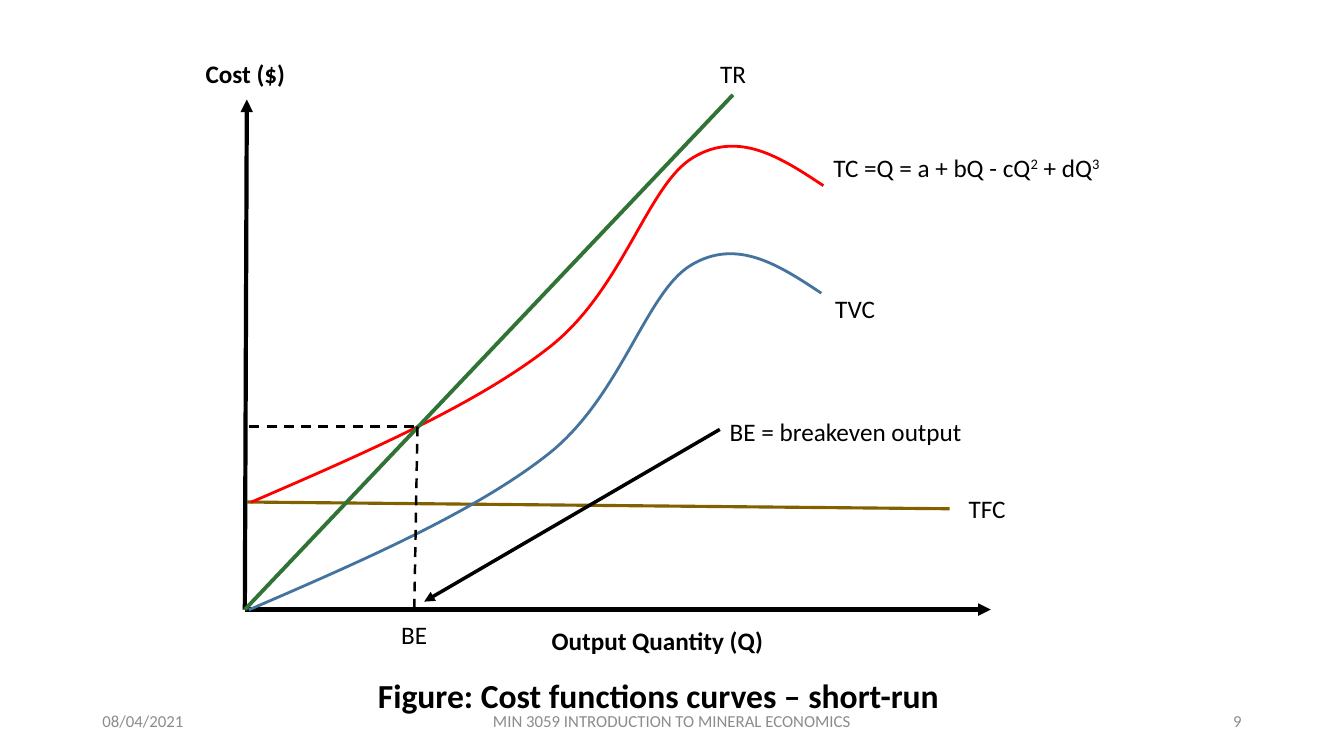
from dataclasses import dataclass

import lxml.etree
import pptx
import pptx.dml.color
import pptx.enum.dml
import pptx.enum.shapes
import pptx.enum.text
import pptx.oxml.ns
import pptx.shapes.base
import pptx.shapes.shapetree
import pptx.text.text
import pptx.util

Cm = pptx.util.Cm
qn = pptx.oxml.ns.qn
Align = pptx.enum.text.PP_ALIGN
Anchor = pptx.enum.text.MSO_ANCHOR
AutoSize = pptx.enum.text.MSO_AUTO_SIZE
Point = tuple[float, float]


@dataclass(frozen=True)
class Theme:
    font: str = "Calibri"
    ink: str = "000000"
    muted: str = "8C8C8C"
    fixed_cost: str = "806000"
    variable_cost: str = "43739E"
    total_cost: str = "FF0000"
    revenue: str = "2F7335"
    caption_size: float = 24
    label_size: float = 18
    footer_size: float = 12


THEME = Theme()


@dataclass(frozen=True)
class Label:
    """Text at a place in cm; every second run is superscript."""
    runs: tuple[str, ...]
    left: float
    top: float
    width: float
    height: float = 1.02
    size: float = THEME.label_size
    color: str = THEME.ink
    bold: bool = False
    align: Align = Align.LEFT
    anchor: Anchor = Anchor.TOP


@dataclass(frozen=True)
class Segment:
    start: Point
    end: Point
    color: str
    weight: float
    arrow: bool = False
    dashed: bool = False


@dataclass(frozen=True)
class Curve:
    color: str
    shift: Point


ORIGIN = (6.17, 15.36)
BREAKEVEN = (10.52, 10.75)
BREAKEVEN_OUTPUT = (10.44, ORIGIN[1])

AXES_AND_FIXED_COST = (
    Segment(ORIGIN, (6.22, 2.51), THEME.ink, 3, arrow=True),
    Segment(ORIGIN, (24.97, ORIGIN[1]), THEME.ink, 3, arrow=True),
    Segment((6.22, 12.65), (23.93, 12.82), THEME.fixed_cost, 2.25),
)
REVENUE_AND_BREAKEVEN = (
    Segment(ORIGIN, (18.47, 2.39), THEME.revenue, 2.75),
    Segment(BREAKEVEN, BREAKEVEN_OUTPUT, THEME.ink, 1.75, dashed=True),
    Segment((BREAKEVEN_OUTPUT[0], BREAKEVEN[1]), (ORIGIN[0], BREAKEVEN[1]),
            THEME.ink, 1.75, dashed=True),
    Segment((18.14, 10.82), (10.69, 15.16), THEME.ink, 2.5, arrow=True),
)

# Bézier points of the variable cost; total cost is the same curve raised by the fixed cost.
COST_START: Point = (6.27, 15.37)
COST_ARCS: tuple[tuple[Point, Point, Point], ...] = (
    ((9.09, 14.15), (11.91, 12.93), (13.77, 11.48)),
    ((15.65, 10.03), (16.26, 7.37), (17.42, 6.68)),
    ((18.57, 5.99), (19.63, 6.68), (20.70, 7.39)),
)
COST_PEAK = 6.40
CURVES = (
    Curve(THEME.variable_cost, (0, 0)),
    Curve(THEME.total_cost, (0.05, -2.71)),
)

CAPTION = Label(("Figure: Cost functions curves – short-run",), 9.27, 16.87, 16.56, 1.27,
                size=THEME.caption_size, bold=True)
LABELS = (
    Label(("TC =Q = a + bQ - cQ", "2", " + dQ", "3"), 20.75, 3.71, 8.03),
    Label(("TVC",), 20.80, 7.26, 3.18),
    Label(("TFC",), 24.16, 12.31, 2.74),
    Label(("Output Quantity (Q)",), 13.65, 15.63, 6.55, bold=True),
    Label(("Cost ($)",), 4.93, 1.35, 4.34, bold=True),
    Label(("TR",), 17.90, 1.35, 3.78),
    Label(("BE",), 9.86, 15.47, 2.31),
    Label(("BE = breakeven output",), 18.14, 10.36, 6.5),
)
FOOTERS = tuple(
    Label((text,), left, 17.65, width, size=THEME.footer_size, color=THEME.muted,
          align=align, anchor=Anchor.MIDDLE)
    for text, left, width, align in (
        ("08/04/2021", 2.33, 7.62, Align.LEFT),
        ("MIN 3059 INTRODUCTION TO MINERAL ECONOMICS", 11.22, 11.43, Align.CENTER),
        ("9", 23.92, 7.62, Align.RIGHT),
    )
)


def rgb(color: str) -> pptx.dml.color.RGBColor:
    return pptx.dml.color.RGBColor.from_string(color)


def write_label(frame: pptx.text.text.TextFrame, label: Label) -> None:
    frame.word_wrap = True
    frame.auto_size = AutoSize.NONE
    frame.vertical_anchor = label.anchor
    paragraph = frame.paragraphs[0]
    paragraph.alignment = label.align
    for index, text in enumerate(label.runs):
        run = paragraph.add_run()
        run.text = text
        run.font.name = THEME.font
        run.font.size = pptx.util.Pt(label.size)
        run.font.bold = label.bold
        run.font.color.rgb = rgb(label.color)
        if index % 2:
            run._r.get_or_add_rPr().set("baseline", "30000")


def add_label(shapes: pptx.shapes.shapetree.SlideShapes, label: Label) -> None:
    box = shapes.add_textbox(Cm(label.left), Cm(label.top), Cm(label.width), Cm(label.height))
    write_label(box.text_frame, label)


def place_caption(title: pptx.shapes.base.BaseShape, label: Label) -> None:
    title.left, title.top = Cm(label.left), Cm(label.top)
    title.width, title.height = Cm(label.width), Cm(label.height)
    write_label(title.text_frame, label)


def add_segment(shapes: pptx.shapes.shapetree.SlideShapes, segment: Segment) -> None:
    connector = shapes.add_connector(
        pptx.enum.shapes.MSO_CONNECTOR.STRAIGHT,
        *(Cm(value) for value in segment.start + segment.end))
    connector.line.color.rgb = rgb(segment.color)
    connector.line.width = pptx.util.Pt(segment.weight)
    if segment.dashed:
        connector.line.dash_style = pptx.enum.dml.MSO_LINE.DASH
    if segment.arrow:
        lxml.etree.SubElement(connector.line._get_or_add_ln(), qn("a:tailEnd"), type="triangle")
    lxml.etree.SubElement(connector._element.spPr, qn("a:effectLst"))


def add_curve(shapes: pptx.shapes.shapetree.SlideShapes, curve: Curve) -> None:
    """Span the curve's extent with one straight line, then bend it into Bézier arcs."""
    dx, dy = curve.shift
    left, bottom = COST_START
    right = COST_ARCS[-1][-1][0]
    builder = shapes.build_freeform(Cm(left + dx), Cm(bottom + dy))
    builder.add_line_segments([(Cm(right + dx), Cm(COST_PEAK + dy))], close=False)
    outline = builder.convert_to_shape()
    outline.shadow.inherit = False
    outline.fill.background()
    outline.line.color.rgb = rgb(curve.color)
    outline.line.width = pptx.util.Pt(2)

    drawing = next(outline._element.iter(qn("a:path")))
    drawing.remove(drawing.find(qn("a:lnTo")))
    for arc in COST_ARCS:
        bend = lxml.etree.SubElement(drawing, qn("a:cubicBezTo"))
        for x, y in arc:
            lxml.etree.SubElement(bend, qn("a:pt"), x=str(int(Cm(x - left))),
                                  y=str(int(Cm(y - COST_PEAK))))


def main() -> None:
    presentation = pptx.Presentation()
    presentation.slide_width, presentation.slide_height = Cm(33.87), Cm(19.05)
    title_only = presentation.slide_layouts[5]
    slide = presentation.slides.add_slide(title_only)
    place_caption(slide.shapes.title, CAPTION)
    for segment in AXES_AND_FIXED_COST:
        add_segment(slide.shapes, segment)
    for curve in CURVES:
        add_curve(slide.shapes, curve)
    for segment in REVENUE_AND_BREAKEVEN:
        add_segment(slide.shapes, segment)
    for label in LABELS + FOOTERS:
        add_label(slide.shapes, label)
    presentation.save("out.pptx")


if __name__ == "__main__":
    main()
